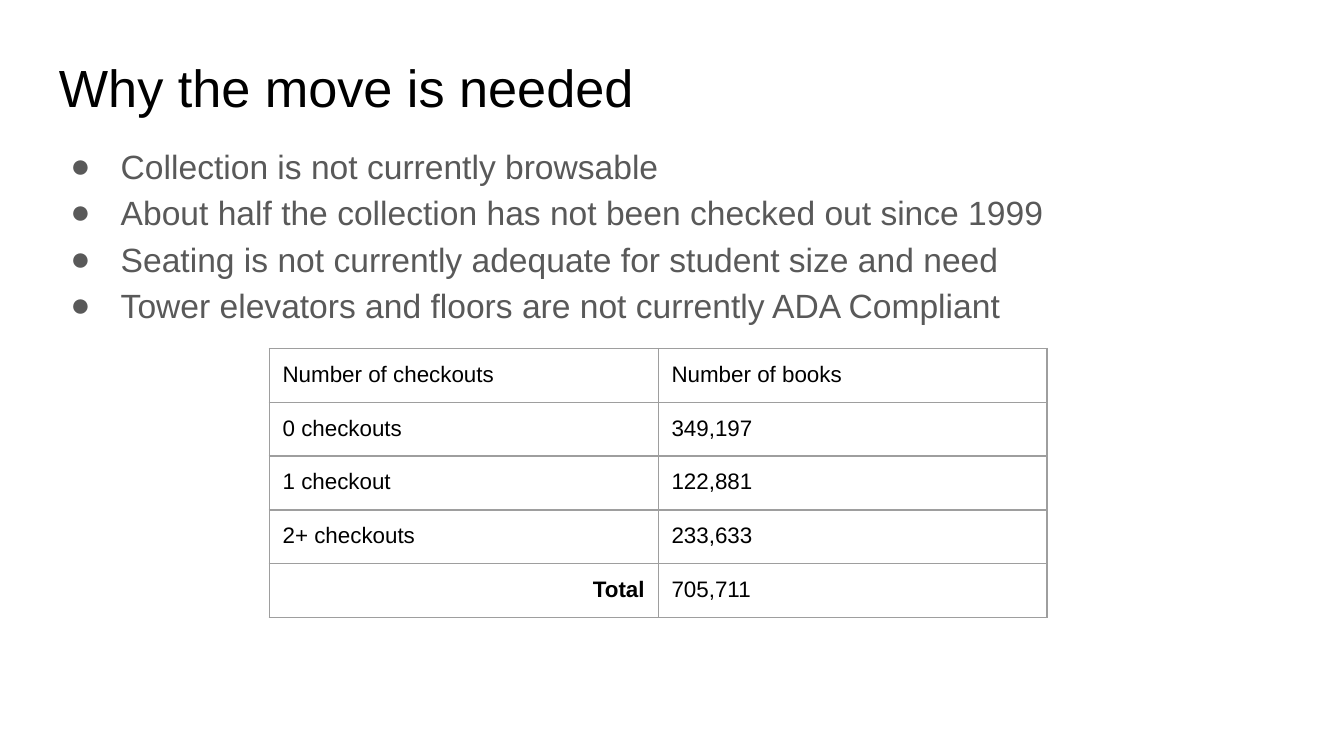
import dataclasses

import pptx
import pptx.dml.color
import pptx.enum.text
import pptx.oxml
import pptx.oxml.ns
import pptx.util
from lxml import etree

Pt = pptx.util.Pt
FONT = "Arial"
COLOURS = {"paper": "FFFFFF", "ink": "000000", "body": "595959", "rule": "9E9E9E"}
INSET = 7.2


@dataclasses.dataclass
class Box:
    left: float
    top: float
    width: float
    height: float

    def lengths(self) -> list:
        return [Pt(v) for v in (self.left, self.top, self.width, self.height)]


@dataclasses.dataclass
class CheckoutRow:
    label: str
    books: str
    total: bool = False


TITLE = "Why the move is needed"
REASONS = [
    "Collection is not currently browsable",
    "About half the collection has not been checked out since 1999",
    "Seating is not currently adequate for student size and need",
    "Tower elevators and floors are not currently ADA Compliant",
]
CHECKOUTS = [
    CheckoutRow("Number of checkouts", "Number of books"),
    CheckoutRow("0 checkouts", "349,197"),
    CheckoutRow("1 checkout", "122,881"),
    CheckoutRow("2+ checkouts", "233,633"),
    CheckoutRow("Total", "705,711", total=True),
]


def rgb(name: str) -> pptx.dml.color.RGBColor:
    return pptx.dml.color.RGBColor.from_string(COLOURS[name])


def add_child(parent, tag: str, **attributes):
    return etree.SubElement(parent, pptx.oxml.ns.qn(tag), attributes)


def write(paragraph, text: str, *, size: float, colour: str = "ink",
          bold: bool = False, align=None, spacing=None, bullet: bool = False) -> None:
    if bullet:
        properties = paragraph._p.get_or_add_pPr()
        properties.set("marL", str(Pt(36)))
        properties.set("indent", str(-Pt(27)))
        add_child(add_child(properties, "a:buClr"), "a:srgbClr", val=COLOURS[colour])
        add_child(properties, "a:buFont", typeface=FONT)
        add_child(properties, "a:buChar", char="●")
    if align is not None:
        paragraph.alignment = align
    if spacing is not None:
        paragraph.line_spacing = spacing
    run = paragraph.add_run()
    run.text = text
    run.font.name = FONT
    run.font.size = Pt(size)
    run.font.bold = bold
    run.font.color.rgb = rgb(colour)


def set_insets(holder) -> None:
    holder.margin_left = holder.margin_right = Pt(INSET)
    holder.margin_top = holder.margin_bottom = Pt(INSET)


def add_text(slide, box: Box, lines: list[str], **style) -> None:
    frame = slide.shapes.add_textbox(*box.lengths()).text_frame
    frame.word_wrap = True
    set_insets(frame)
    for index, line in enumerate(lines):
        paragraph = frame.add_paragraph() if index else frame.paragraphs[0]
        write(paragraph, line, **style)


def draw_cell(cell, text: str, **style) -> None:
    set_insets(cell)
    properties = cell._tc.get_or_add_tcPr()
    for side in ("a:lnL", "a:lnR", "a:lnT", "a:lnB"):
        border = add_child(properties, side, w=str(Pt(0.75)))
        add_child(add_child(border, "a:solidFill"), "a:srgbClr", val=COLOURS["rule"])
    cell.fill.background()
    write(cell.text_frame.paragraphs[0], text, size=12, **style)


def add_checkout_table(slide, box: Box, rows: list[CheckoutRow]) -> None:
    table = slide.shapes.add_table(len(rows), 2, *box.lengths()).table
    table.first_row = table.horz_banding = False
    right = pptx.enum.text.PP_ALIGN.RIGHT
    for index, row in enumerate(rows):
        draw_cell(table.cell(index, 0), row.label, bold=row.total,
                  align=right if row.total else None)
        draw_cell(table.cell(index, 1), row.books)


def main() -> None:
    deck = pptx.Presentation()
    deck.slide_width, deck.slide_height = Pt(720), Pt(405)
    slide = deck.slides.add_slide(deck.slide_layouts[6])
    slide.background.fill.solid()
    slide.background.fill.fore_color.rgb = rgb("paper")

    # Heading and reasons
    add_text(slide, Box(24.5, 22.4, 671, 45.4), [TITLE], size=28)
    add_text(slide, Box(21.6, 67.7, 671, 269.3), REASONS, size=18,
             colour="body", spacing=1.15, bullet=True)

    # Checkout counts
    add_checkout_table(slide, Box(144.2, 186.7, 416.8, 139.5), CHECKOUTS)

    deck.save("out.pptx")


if __name__ == "__main__":
    main()
